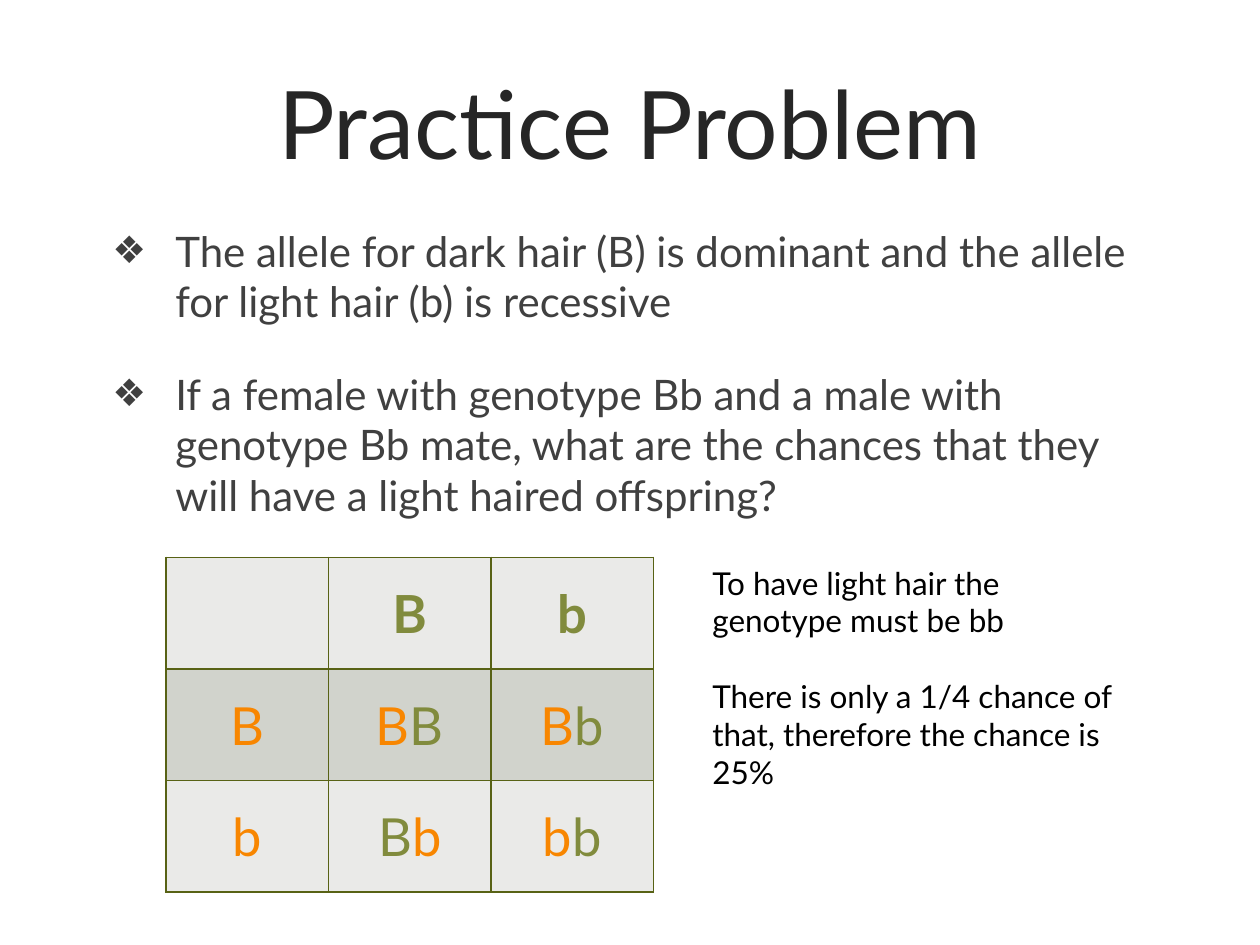
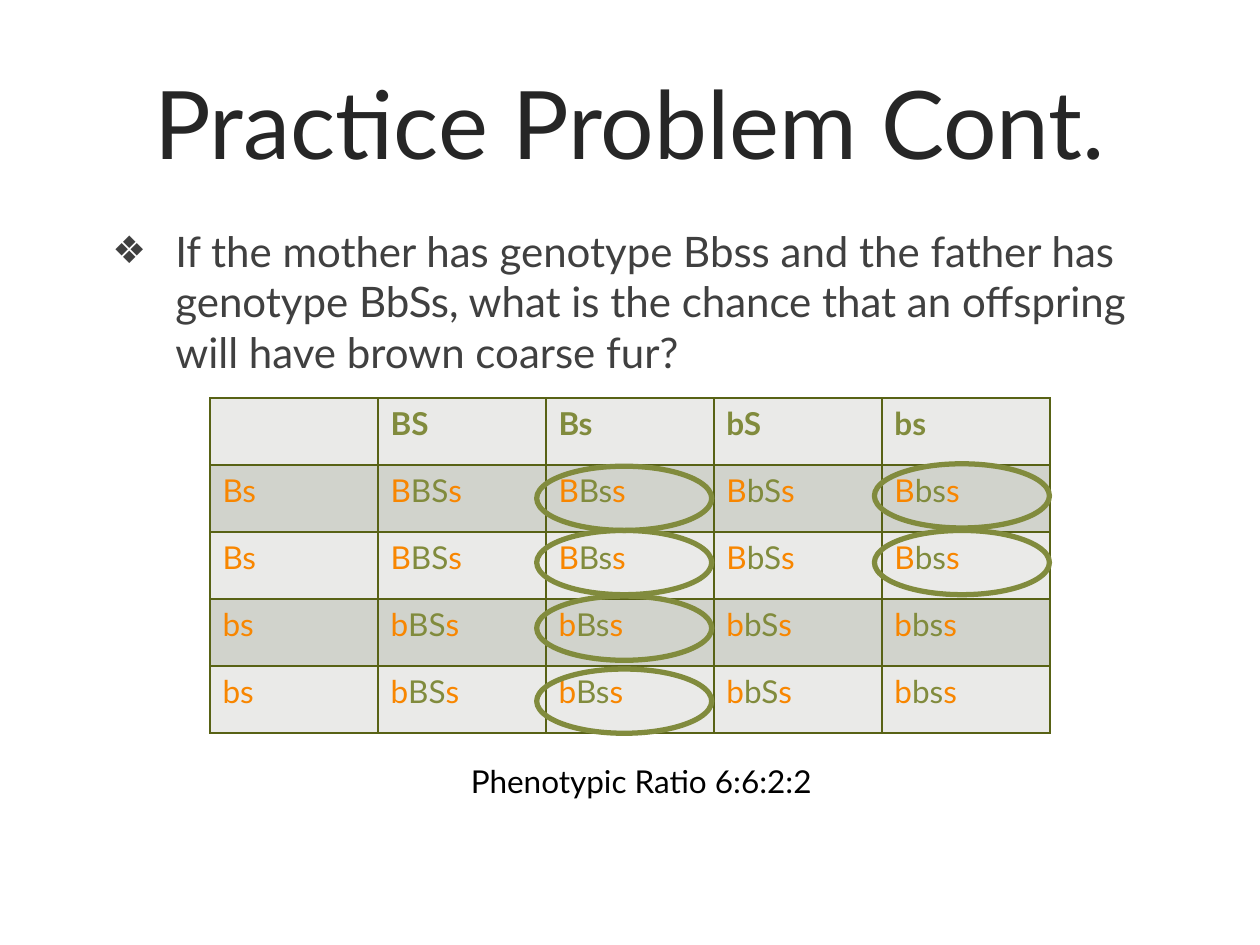
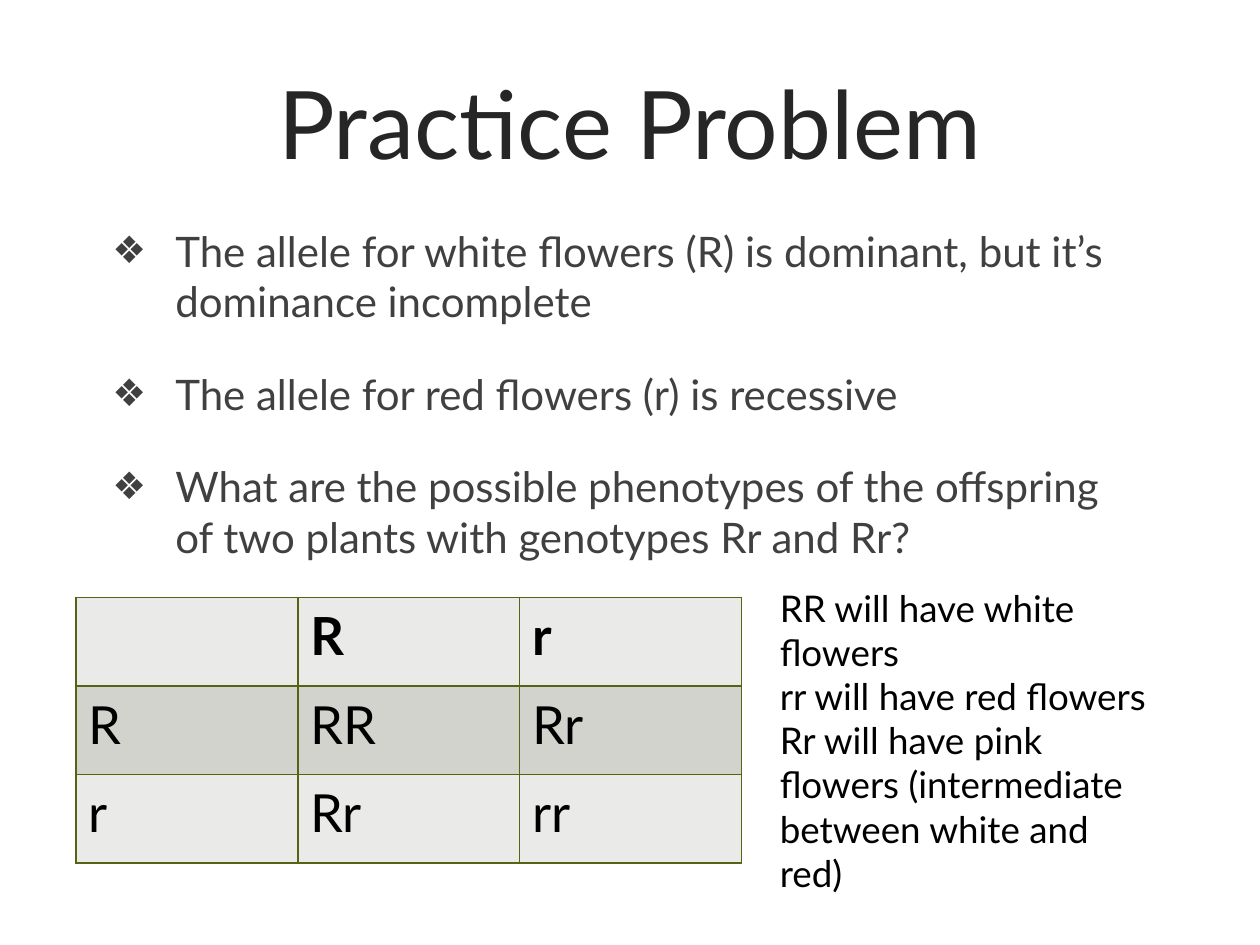
from lxml.etree import SubElement
from pptx import Presentation
from pptx.dml.color import RGBColor
from pptx.enum.shapes import MSO_SHAPE as Shape
from pptx.enum.text import MSO_ANCHOR as Anchor, MSO_AUTO_SIZE as AutoSize, PP_ALIGN as Align
from pptx.oxml.ns import qn
from pptx.util import Pt

TITLE_INK = RGBColor(0x26, 0x26, 0x26)
BODY_INK = RGBColor(0x40, 0x40, 0x40)
BLACK = RGBColor(0, 0, 0)
GREEN = RGBColor(0x81, 0x8B, 0x3D)
ORANGE = RGBColor(0xF8, 0x86, 0x00)
BORDER = RGBColor(0x58, 0x62, 0x15)
LIGHT_ROW = RGBColor(0xEA, 0xEA, 0xE8)
DARK_ROW = RGBColor(0xD1, 0xD3, 0xCC)

TITLE_FONT = {"name": "Lato", "size": Pt(54)}
BODY_FONT = {"name": "Lato", "size": Pt(24)}
BULLET_INDENT = Pt(36)

# In a Punnett square, text between asterisks comes from the orange parent.
FATHER = ["BS", "Bs", "bS", "bs"]
MOTHER = ["Bs", "Bs", "bs", "bs"]
fur_square = [[""] + FATHER]
for first, second in MOTHER:
    fur_square.append([f"*{first}{second}*"] + [f"*{first}*{gamete}*{second}*" for gamete in FATHER])

PROBLEMS = [
    {
        "title": "Practice Problem",
        "points": [
            "The allele for dark hair (B) is dominant and the allele for light hair (b) is recessive",
            "If a female with genotype Bb and a male with genotype Bb mate, "
            "what are the chances that they will have a light haired offspring?",
        ],
        "body_height": 360,
        "square": [["", "B", "b"], ["*B*", "*B*B", "*B*b"], ["*b*", "B*b*", "*b*b"]],
        "square_box": (95, 318.5, 278.4, 191.4),
        "square_size": 30, "square_ink": GREEN,
        "square_align": Align.CENTER, "square_anchor": Anchor.MIDDLE,
        "notes": [
            "To have light hair the genotype must be bb",
            "There is only a 1/4 chance of that, therefore the chance is 25%",
        ],
        "notes_box": (400, 318.5, 250, 138),
        "notes_size": 18, "notes_gap": 21.6, "notes_align": Align.LEFT,
        "circles": [],
    },
    {
        "title": "Practice Problem Cont.",
        "points": [
            "If the mother has genotype Bbss and the father has genotype BbSs, "
            "what is the chance that an offspring will have brown coarse fur?",
        ],
        "body_height": 306.7,
        "square": fur_square,
        "square_box": (120, 227.5, 480, 191.5),
        "square_size": 18, "square_ink": GREEN,
        "square_align": Align.LEFT, "square_anchor": Anchor.TOP,
        "notes": ["Phenotypic Ratio 6:6:2:2 "],
        "notes_box": (120, 432, 497.5, 29.5),
        "notes_size": 18, "notes_gap": 0, "notes_align": Align.CENTER,
        "circles": [(306.7, 266.4), (306.7, 303.1), (306.7, 340.6), (306.7, 382.3),
                    (499.7, 265), (499.7, 303.1)],
    },
    {
        "title": "Practice Problem",
        "points": [
            "The allele for white flowers (R) is dominant, but it’s dominance incomplete",
            "The allele for red flowers (r) is recessive",
            "What are the possible phenotypes of the offspring of two plants with genotypes Rr and Rr?",
        ],
        "body_height": 216.7,
        "square": [["", "R", "r"], ["R", "RR", "Rr"], ["r", "Rr", "rr"]],
        "square_box": (43.5, 341.5, 380.2, 151.7),
        "square_size": 30, "square_ink": BLACK,
        "square_align": Align.LEFT, "square_anchor": Anchor.TOP,
        "notes": [
            "RR will have white flowers",
            "rr will have red flowers",
            "Rr will have pink flowers (intermediate between white and red)",
        ],
        "notes_box": (438.5, 331.2, 224.6, 160),
        "notes_size": 21, "notes_gap": 0, "notes_align": Align.LEFT,
        "circles": [],
    },
]


def write(para, text, ink, font):
    """Add text to a paragraph, with the parts between asterisks in orange."""
    for index, part in enumerate(text.split("*")):
        if part:
            span = para.add_run()
            span.text = part
            span.font.color.rgb = ORANGE if index % 2 else ink
            for name, value in font.items():
                setattr(span.font, name, value)


def place(box, left, top, width, height):
    box.left, box.top, box.width, box.height = Pt(left), Pt(top), Pt(width), Pt(height)


deck = Presentation()
deck.slide_width, deck.slide_height = Pt(720), Pt(540)

for problem in PROBLEMS:
    page = deck.slides.add_slide(deck.slide_layouts[1])

    title, body = page.placeholders
    place(title, 57, 24.5, 605.5, 90)
    place(body, 57, 125.3, 605.5, problem["body_height"])
    for holder in (title, body):
        holder.text_frame.auto_size = AutoSize.NONE
    title.text_frame.vertical_anchor = Anchor.MIDDLE
    heading = title.text_frame.paragraphs[0]
    heading.alignment = Align.CENTER
    write(heading, problem["title"], TITLE_INK, TITLE_FONT)

    for index, point in enumerate(problem["points"]):
        para = body.text_frame.add_paragraph() if index else body.text_frame.paragraphs[0]
        para.space_before = Pt(24)
        props = para._p.get_or_add_pPr()
        props.set("marL", str(BULLET_INDENT))
        props.set("indent", str(-BULLET_INDENT))
        SubElement(props, qn("a:buSzPct"), val="90000")
        SubElement(props, qn("a:buChar"), char="❖")
        write(para, point, BODY_INK, BODY_FONT)

    rows = problem["square"]
    left, top, width, height = problem["square_box"]
    table = page.shapes.add_table(
        len(rows), len(rows[0]), Pt(left), Pt(top), Pt(width), Pt(height)).table
    for column in table.columns:
        column.width = Pt(width / len(rows[0]))
    for row_index, row in enumerate(rows):
        table.rows[row_index].height = Pt(height / len(rows))
        for column_index, text in enumerate(row):
            cell = table.cell(row_index, column_index)
            cell_props = cell._tc.get_or_add_tcPr()
            for side in ("a:lnL", "a:lnR", "a:lnT", "a:lnB"):
                line = SubElement(cell_props, qn(side), w=str(Pt(1)))
                SubElement(SubElement(line, qn("a:solidFill")), qn("a:srgbClr"), val=str(BORDER))
            cell.fill.solid()
            cell.fill.fore_color.rgb = DARK_ROW if row_index % 2 else LIGHT_ROW
            cell.vertical_anchor = problem["square_anchor"]
            para = cell.text_frame.paragraphs[0]
            para.alignment = problem["square_align"]
            write(para, text, problem["square_ink"],
                  {"name": "Lato", "size": Pt(problem["square_size"]), "bold": row_index == 0})

    frame = page.shapes.add_textbox(*map(Pt, problem["notes_box"])).text_frame
    frame.word_wrap = True
    frame.auto_size = AutoSize.SHAPE_TO_FIT_TEXT
    for index, note in enumerate(problem["notes"]):
        para = frame.add_paragraph() if index else frame.paragraphs[0]
        para.alignment = problem["notes_align"]
        para.space_before = Pt(problem["notes_gap"] if index else 0)
        write(para, note, BLACK, {"name": "Lato", "size": Pt(problem["notes_size"])})

    for left, top in problem["circles"]:
        circle = page.shapes.add_shape(Shape.OVAL, Pt(left), Pt(top), Pt(100), Pt(36.7))
        circle.shadow.inherit = False
        circle.fill.background()
        circle.line.color.rgb = GREEN
        circle.line.width = Pt(3)

deck.save("out.pptx")
